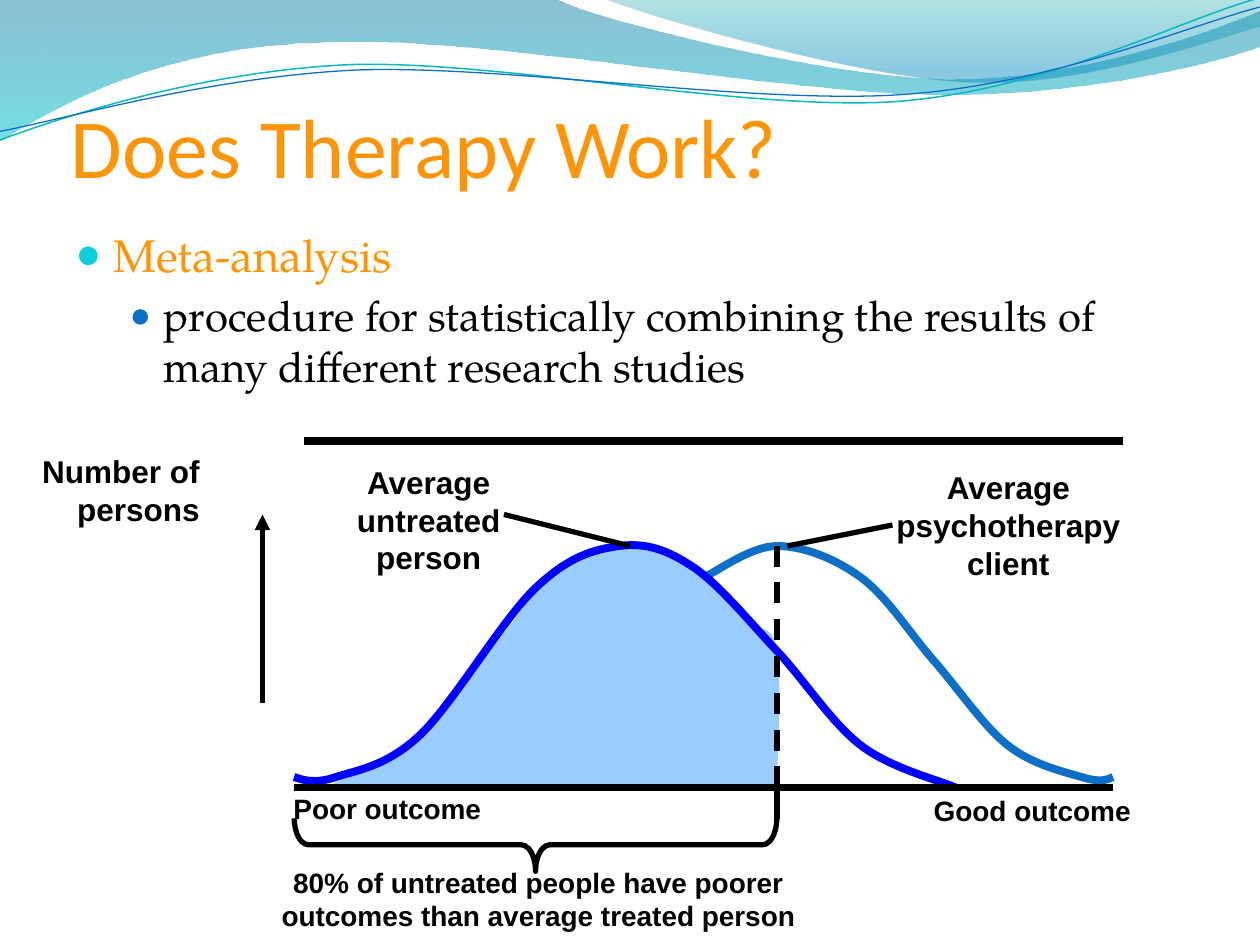
"""Builds the slide on whether therapy works, with its two outcome curves."""
import pptx
import pptx.dml.color
import pptx.enum.dml
import pptx.enum.shapes
import pptx.enum.text
import pptx.oxml
import pptx.oxml.ns
import pptx.util

Pt = pptx.util.Pt
qn = pptx.oxml.ns.qn
ALIGN = pptx.enum.text.PP_ALIGN
COLORS = {
    "orange": "FE9508", "black": "000000", "cyan": "0BD0D9", "blue": "0F6FC6",
    "teal": "0AB8BF", "curve": "0000FF", "area": "99CCFF",
    "wave_top": "0074A1", "wave_end": "00C6CF",
    "crest_top": "00A1A9", "crest_end": "008BBF",
}
TITLE = "Does Therapy Work?"
BULLETS = [
    {"text": "Meta-analysis", "size": 26, "color": "orange", "bullet": "cyan",
     "scale": 95, "left": 21.6, "hang": 21.6},
    {"text": "procedure for statistically combining the results of many different research studies",
     "size": 24, "color": "black", "bullet": "blue", "scale": 85, "left": 50.4, "hang": 19.44},
]

# Each path is a start followed by lines (2 numbers) or cubic curves (6 numbers).
WAVE = [(0, 0), (317, -1), (343, 12, 478, 45, 546, 45), (614, 45, 690, 19, 720, 6),
        (721, 26), (708, 32, 626, 55, 537, 54), (448, 54, 275, 20, 185, 24),
        (93, 26, 33, 60, -1, 81), (0, 0)]
CREST = [(345, -1), (366, 8, 491, 45, 554, 47), (618, 50, 692, 23, 720, 15), (720, 0),
         (345, -1)]
TEAL_STROKE = [(0, 80), (35, 67, 114, 41, 199, 37), (284, 34, 427, 64, 513, 58),
               (600, 51, 675, 11, 719, -1)]
BLUE_STROKE = [(0, 75), (34, 69, 118, 44, 204, 40), (290, 37, 430, 60, 516, 54),
               (602, 48, 678, 15, 720, 4)]
CLIENT_CURVE = [(636, 444), (632, 446, 628, 447, 618, 444), (608, 441, 590, 437, 576, 426),
                (562, 415, 548, 394, 534, 378), (520, 362, 507, 341, 492, 330),
                (477, 319, 459, 312, 444, 312), (429, 312, 409, 327, 402, 330)]
UNTREATED_AREA = [(186, 450), (194, 446, 202, 442, 210, 438), (218, 434, 224, 435, 234, 426),
                  (244, 417, 260, 396, 270, 384), (280, 372, 286, 364, 294, 354),
                  (302, 344, 309, 331, 318, 324), (327, 317, 340, 314, 348, 312),
                  (356, 310, 358, 310, 366, 312), (374, 314, 386, 317, 396, 324),
                  (406, 331, 418, 346, 426, 354), (434, 362, 441, 355, 444, 372),
                  (447, 388, 444, 437, 444, 450)]
UNTREATED_CURVE = [(168, 444), (174, 446, 180, 448, 192, 444), (204, 440, 221, 438, 240, 420),
                   (259, 402, 287, 354, 306, 336), (325, 318, 339, 314, 354, 312),
                   (369, 310, 381, 314, 396, 324), (411, 334, 428, 355, 444, 372),
                   (460, 389, 475, 413, 492, 426), (509, 439, 537, 446, 546, 450)]
BACK_LINES = [((174, 252, 642, 252), 4.5, None)]
BRACE_LINES = [((444, 468, 444, 450), 3, None)]
FRONT_LINES = [((444, 450, 444, 312), 3, "dash"), ((168, 450, 636, 450), 4.5, None)]
POINTER_LINES = [((288, 294, 360, 312), 3, None), ((450, 312, 510, 300), 3, None)]
ARROW_LINES = [((150, 402, 150, 294), 3, "arrow")]
BRACE = (290.88, 344.88, 30.24, 275.76)
OUTCOME_LABELS = [
    (["Poor outcome"], (160.6, 448.5, 121.7, 26.6), 16, ALIGN.LEFT),
    (["Good outcome"], (526.5, 450, 127.4, 26.6), 16, ALIGN.LEFT),
]
CURVE_LABELS = [
    (["Average", "untreated", "person"], (196.7, 260.9, 96.5, 72), 18, ALIGN.CENTER),
    (["Average", "psychotherapy", "client"], (504.9, 264.2, 142.6, 72), 18, ALIGN.CENTER),
]
SIDE_LABELS = [
    (["Number of", "persons"], (16.8, 254.9, 104.4, 50.4), 18, ALIGN.RIGHT),
    (["80% of untreated people have poorer", "outcomes than average treated person"],
     (153.2, 490.8, 308.9, 46.1), 16, ALIGN.CENTER),
]


def rgb(name):
    return pptx.dml.color.RGBColor.from_string(COLORS[name])


def add_xml(parent, tag, **attrs):
    el = pptx.oxml.parse_xml(f"<a:{tag} {pptx.oxml.ns.nsdecls('a')}/>")
    for key, value in attrs.items():
        el.set(key, str(value))
    parent.append(el)
    return el


def set_line(sp, color, width):
    sp.line.color.rgb = rgb(color)
    sp.line.width = Pt(width)


def add_path(shapes, outline, closed=False):
    points = [(Pt(seg[i]), Pt(seg[i + 1])) for seg in outline for i in range(0, len(seg), 2)]
    builder = shapes.build_freeform(*points[0])
    builder.add_line_segments(points[1:], close=closed)
    sp = builder.convert_to_shape()
    legs = iter(list(sp._element.spPr.iter(qn("a:lnTo"))))
    for seg in outline[1:]:
        leg = next(legs)
        if len(seg) == 6:
            curve = add_xml(leg.getparent(), "cubicBezTo")
            leg.addprevious(curve)
            for part in (leg, next(legs), next(legs)):
                curve.append(part[0])
                part.getparent().remove(part)
    sp.shadow.inherit = False
    if closed:
        sp.line.fill.background()
    else:
        sp.fill.background()
    return sp


def add_stroke(shapes, outline, color, width):
    set_line(add_path(shapes, outline), color, width)


def add_gradient(shapes, outline, stops):
    sp = add_path(shapes, outline, closed=True)
    sp.fill.gradient()
    sp.fill.gradient_angle = 270
    for stop, (position, color, _) in zip(sp.fill.gradient_stops, stops):
        stop.position = position
        stop.color.rgb = rgb(color)
    for el, (_, _, opacity) in zip(sp._element.spPr.iter(qn("a:srgbClr")), stops):
        add_xml(el, "alpha", val=opacity * 1000)


def add_lines(shapes, lines):
    for ends, width, style in lines:
        c = shapes.add_connector(pptx.enum.shapes.MSO_CONNECTOR.STRAIGHT, *map(Pt, ends))
        set_line(c, "black", width)
        if style == "dash":
            c.line.dash_style = pptx.enum.dml.MSO_LINE.DASH
        elif style == "arrow":
            add_xml(c._element.spPr.find(qn("a:ln")), "tailEnd", type="triangle")
        add_xml(c._element.spPr, "effectLst")


def add_box(shapes, frame, **formats):
    tf = shapes.add_textbox(*map(Pt, frame)).text_frame
    for key, value in formats.items():
        setattr(tf, key, value)
    return tf


def write(tf, index, text, color, **formats):
    p = tf.paragraphs[0] if index == 0 else tf.add_paragraph()
    r = p.add_run()
    r.text = text
    r.font.color.rgb = rgb(color)
    for key, value in formats.items():
        setattr(r.font, key, value)
    return p


def add_labels(shapes, labels):
    for rows, frame, size, align in labels:
        tf = add_box(shapes, frame, word_wrap=False,
                     auto_size=pptx.enum.text.MSO_AUTO_SIZE.SHAPE_TO_FIT_TEXT)
        for i, text in enumerate(rows):
            write(tf, i, text, "black", size=Pt(size), name="Arial", bold=True).alignment = align


def main():
    prs = pptx.Presentation()
    prs.slide_width, prs.slide_height = Pt(720), Pt(540)
    shapes = prs.slides.add_slide(prs.slide_layouts[6]).shapes
    add_gradient(shapes, WAVE, [(0, "wave_top", 45), (1, "wave_end", 55)])
    add_gradient(shapes, CREST, [(0, "crest_top", 30), (0.8, "crest_end", 45)])
    add_stroke(shapes, TEAL_STROKE, "teal", 0.85)
    add_stroke(shapes, BLUE_STROKE, "blue", 0.75)
    tf = add_box(shapes, (40.3, 21.6, 582.5, 90), word_wrap=True, margin_left=0, margin_right=0,
                 margin_bottom=0, vertical_anchor=pptx.enum.text.MSO_ANCHOR.BOTTOM)
    write(tf, 0, TITLE, "orange", size=Pt(48), name="Calibri")
    tf = add_box(shapes, (36, 126, 643.7, 113.8), word_wrap=True)
    for i, b in enumerate(BULLETS):
        p = write(tf, i, b["text"], b["color"], size=Pt(b["size"]), name="TeX Gyre Pagella")
        p.level = i
        p.space_before = Pt(b["size"] * 0.2)
        pPr = p._p.get_or_add_pPr()
        pPr.set("marL", str(Pt(b["left"])))
        pPr.set("indent", str(-Pt(b["hang"])))
        add_xml(add_xml(pPr, "buClr"), "srgbClr", val=COLORS[b["bullet"]])
        add_xml(pPr, "buSzPct", val=b["scale"] * 1000)
        add_xml(pPr, "buFont", typeface="Arial")
        add_xml(pPr, "buChar", char="●")
    add_stroke(shapes, CLIENT_CURVE, "blue", 4.5)
    add_lines(shapes, BACK_LINES)
    sp = shapes.add_shape(pptx.enum.shapes.MSO_SHAPE.RIGHT_BRACE, *map(Pt, BRACE))
    sp.rotation = 90
    sp.adjustments[0] = 0.27
    sp.shadow.inherit = False
    sp.fill.background()
    set_line(sp, "black", 3)
    add_lines(shapes, BRACE_LINES)
    sp = add_path(shapes, UNTREATED_AREA, closed=True)
    sp.fill.solid()
    sp.fill.fore_color.rgb = rgb("area")
    add_stroke(shapes, UNTREATED_CURVE, "curve", 4.5)
    add_lines(shapes, FRONT_LINES)
    add_labels(shapes, OUTCOME_LABELS)
    add_lines(shapes, ARROW_LINES)
    add_labels(shapes, CURVE_LABELS)
    add_lines(shapes, POINTER_LINES)
    add_labels(shapes, SIDE_LABELS)
    prs.save("out.pptx")


if __name__ == "__main__":
    main()
